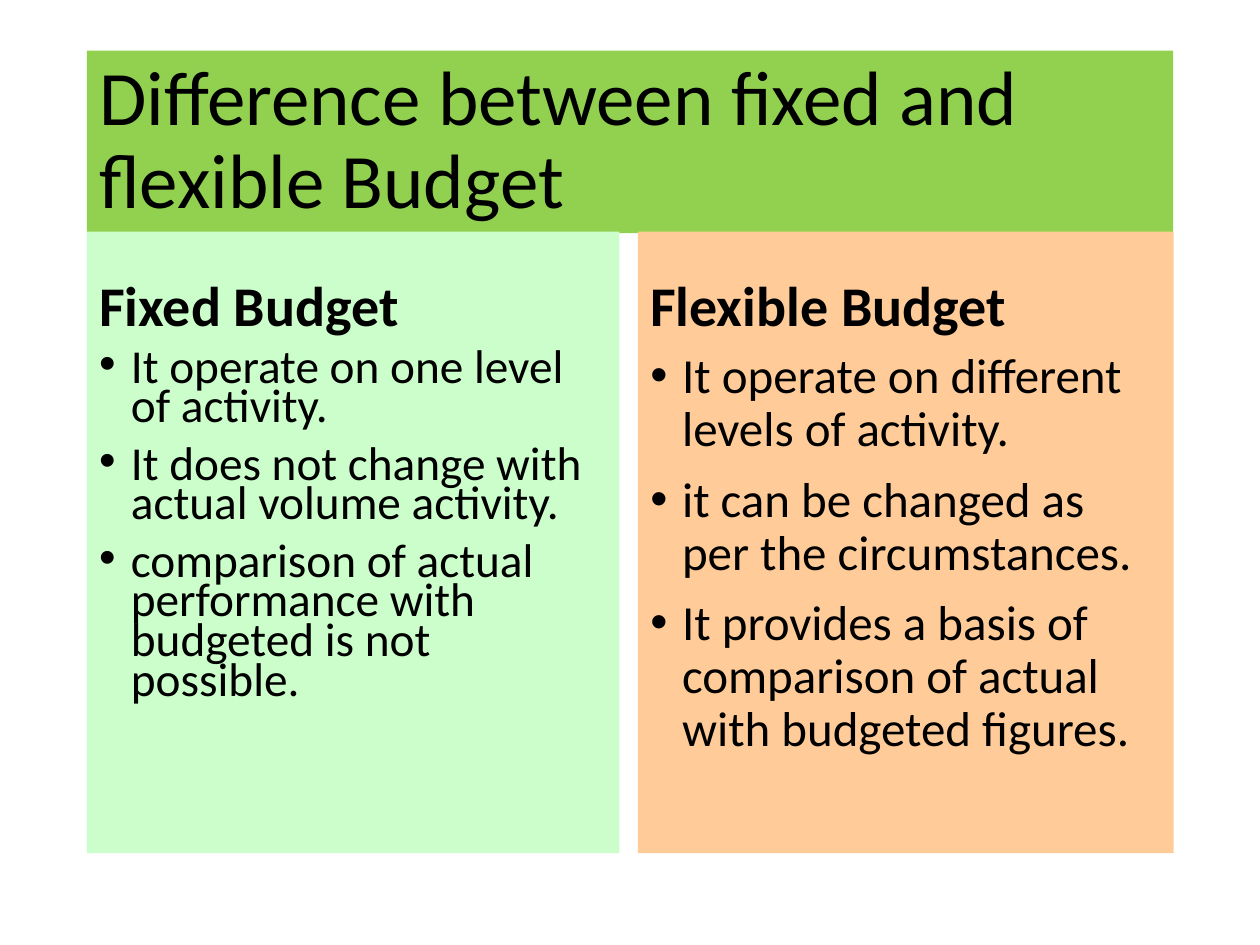
import pptx
import pptx.dml.color
import pptx.enum.shapes
import pptx.enum.text
import pptx.util
from lxml import etree
from pptx.util import Cm

ANCHOR = pptx.enum.text.MSO_ANCHOR
INDENT = Cm(0.64)


def rgb(value):
    return pptx.dml.color.RGBColor.from_string(value)


class Deck:
    font = "Calibri"
    ink = "000000"

    def __init__(self, width, height):
        self.prs = pptx.Presentation()
        self.prs.slide_width, self.prs.slide_height = Cm(width), Cm(height)
        self.s = self.prs.slides.add_slide(self.prs.slide_layouts[6])

    def panel(self, box, fill, lines, size, anchor, spacing=0.9,
              before=10, bold=False, bullets=False):
        """Add a filled rectangle with one paragraph per line."""
        sp = self.s.shapes.add_shape(
            pptx.enum.shapes.MSO_SHAPE.RECTANGLE, *map(Cm, box))
        sp.shadow.inherit = False
        sp.fill.solid()
        sp.fill.fore_color.rgb = rgb(fill)
        sp.line.fill.background()
        tf = sp.text_frame
        tf.word_wrap = True
        tf.vertical_anchor = anchor
        tf.text = "\n".join(lines)
        for p in tf.paragraphs:
            p.alignment = pptx.enum.text.PP_ALIGN.LEFT
            p.line_spacing = spacing
            p.space_before = pptx.util.Pt(before)
            if bullets:
                self.bullet(p)
            for r in p.runs:
                r.font.name = self.font
                r.font.size = pptx.util.Pt(size)
                r.font.bold = bold
                r.font.color.rgb = rgb(self.ink)

    def bullet(self, p):
        pPr = p._p.get_or_add_pPr()
        pPr.set("marL", str(INDENT))
        pPr.set("indent", str(-INDENT))
        ns = pptx.oxml.ns.qn
        etree.SubElement(pPr, ns("a:buFont")).set("typeface", "Arial")
        etree.SubElement(pPr, ns("a:buChar")).set("char", "•")

    def title(self, box, text):
        self.panel(box, "92D050", [text], 44, ANCHOR.MIDDLE, before=0)

    def column(self, left, width, fill, heading, points, size, spacing):
        """Add a heading panel with a bulleted panel right below it."""
        top, head, body = 4.67, 2.29, 10.24
        self.panel((left, top, width, head), fill, [heading], 32,
                   ANCHOR.BOTTOM, bold=True)
        self.panel((left, top + head, width, body), fill, points, size,
                   ANCHOR.TOP, spacing, bullets=True)


def main():
    deck = Deck(25.4, 19.05)
    deck.title((1.75, 1.02, 21.9, 3.68),
               "Difference between fixed and flexible Budget")
    deck.column(1.75, 10.74, "CCFECC", "Fixed Budget", [
        "It operate on one level of activity.",
        "It does not change with actual volume activity.",
        "comparison of actual performance with budgeted is not possible.",
    ], 27, 0.7)
    deck.column(12.86, 10.8, "FFCC99", "Flexible Budget", [
        "It operate on different levels of activity.",
        "it can be changed as per the circumstances.",
        "It provides a basis of comparison of actual with budgeted figures.",
    ], 28, 0.9)
    deck.prs.save("out.pptx")


if __name__ == "__main__":
    main()
